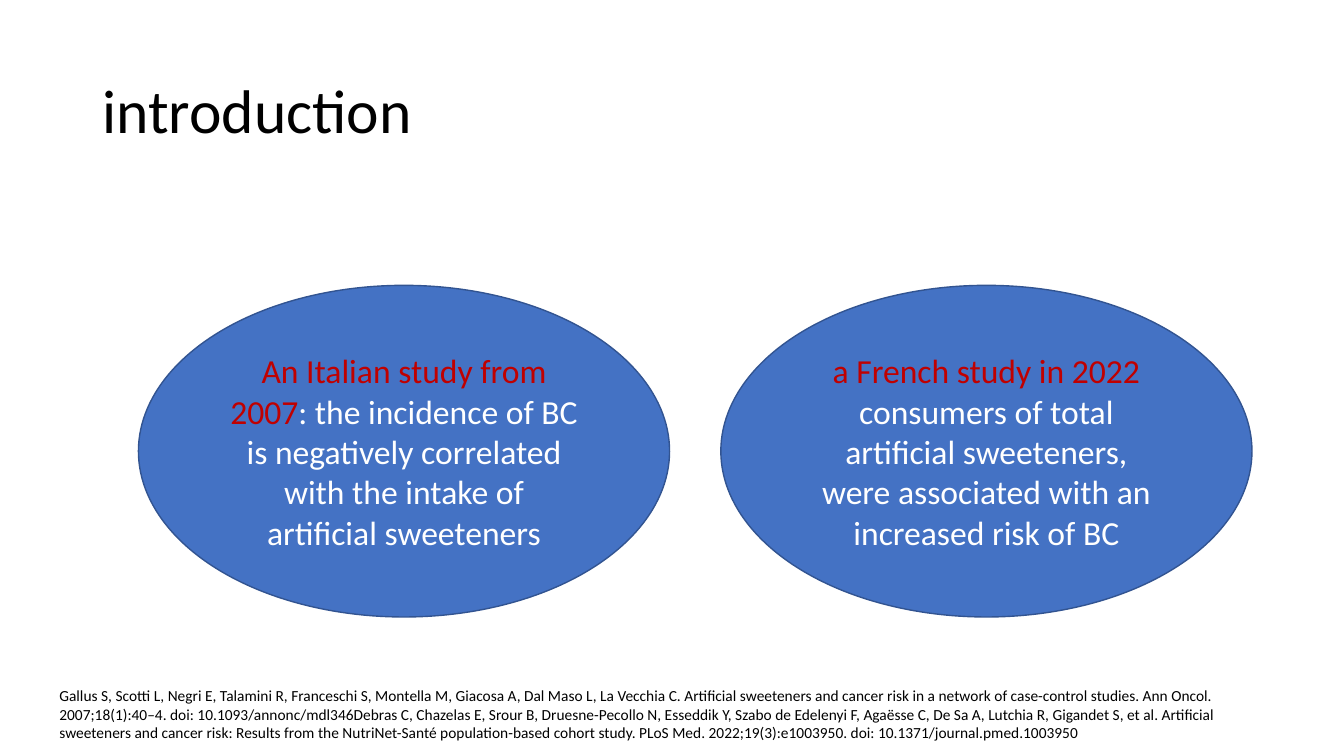
from dataclasses import dataclass

from pptx import Presentation
from pptx.dml.color import RGBColor
from pptx.enum.shapes import MSO_SHAPE
from pptx.enum.text import MSO_ANCHOR, PP_ALIGN
from pptx.util import Pt


@dataclass(frozen=True)
class Theme:
    font: str = "Calibri"
    black: str = "000000"
    white: str = "FFFFFF"
    red: str = "C00000"
    blue: str = "4472C4"
    outline: str = "325491"
    title_size: int = 44
    body_size: int = 24
    reference_size: int = 11


THEME = Theme()


def add_run(p, text, size, color):
    r = p.add_run()
    r.text = text
    r.font.name = THEME.font
    r.font.size = Pt(size)
    r.font.color.rgb = RGBColor.from_string(color)


prs = Presentation()
prs.slide_width, prs.slide_height = Pt(960), Pt(540)
s = prs.slides.add_slide(prs.slide_layouts[5])

# Title
title = s.shapes.title
title.left, title.top, title.width, title.height = Pt(66), Pt(28.75), Pt(828), Pt(104.4)
tf = title.text_frame
tf.vertical_anchor = MSO_ANCHOR.MIDDLE
p = tf.paragraphs[0]
p.alignment = PP_ALIGN.LEFT
p.line_spacing = 0.9
add_run(p, "introduction", THEME.title_size, THEME.black)

# Two studies side by side: highlighted lead, then finding
studies = [
    ("An Italian study from 2007",
     ": the incidence of BC is negatively correlated with the intake of artificial sweeteners"),
    ("a French study in 2022 ",
     "consumers of total artificial sweeteners, were associated with an increased risk of BC"),
]
study_left, study_step = 98.9, 416
for i, (lead, finding) in enumerate(studies):
    sp = s.shapes.add_shape(MSO_SHAPE.OVAL, Pt(study_left + i * study_step), Pt(203.8),
                            Pt(379.4), Pt(236.9))
    sp.shadow.inherit = False
    sp.fill.solid()
    sp.fill.fore_color.rgb = RGBColor.from_string(THEME.blue)
    sp.line.color.rgb = RGBColor.from_string(THEME.outline)
    sp.line.width = Pt(1)
    tf = sp.text_frame
    tf.word_wrap = True
    tf.vertical_anchor = MSO_ANCHOR.MIDDLE
    p = tf.paragraphs[0]
    p.alignment = PP_ALIGN.CENTER
    add_run(p, lead, THEME.body_size, THEME.red)
    add_run(p, finding, THEME.body_size, THEME.white)

# References
references = (
    "Gallus S, Scotti L, Negri E, Talamini R, Franceschi S, Montella M, Giacosa A, Dal Maso L, "
    "La Vecchia C. Artificial sweeteners and cancer risk in a network of case-control studies. "
    "Ann Oncol. 2007;18(1):40–4. doi: 10.1093/annonc/mdl346"
    "Debras C, Chazelas E, Srour B, Druesne-Pecollo N, Esseddik Y, Szabo de Edelenyi F, "
    "Agaësse C, De Sa A, Lutchia R, Gigandet S, et al. Artificial sweeteners and cancer risk: "
    "Results from the NutriNet-Santé population-based cohort study. "
    "PLoS Med. 2022;19(3):e1003950. doi: 10.1371/journal.pmed.1003950"
)
tf = s.shapes.add_textbox(Pt(35.3), Pt(486.7), Pt(858.2), Pt(47.5)).text_frame
tf.word_wrap = True
add_run(tf.paragraphs[0], references, THEME.reference_size, THEME.black)

prs.save("out.pptx")
